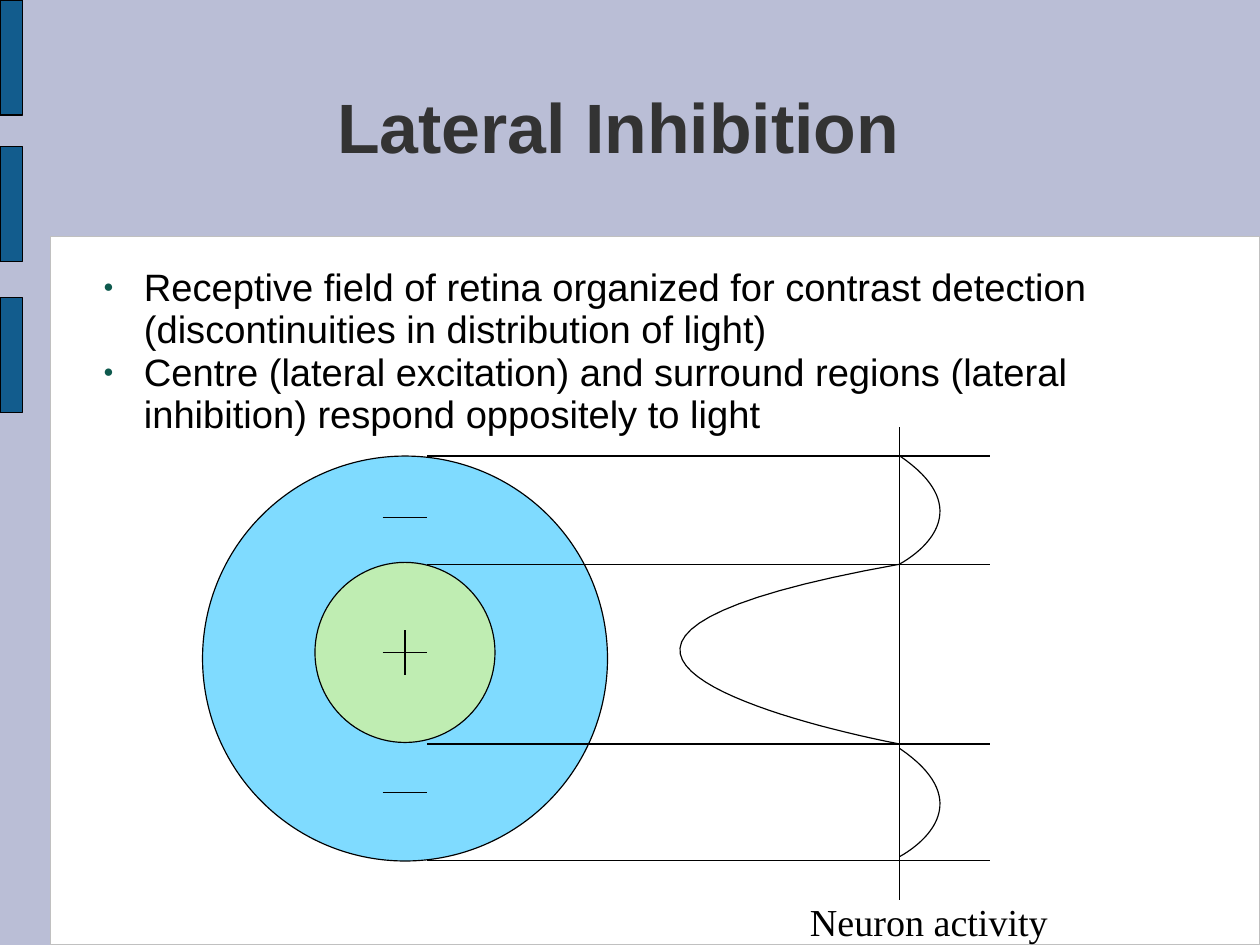
from lxml.etree import SubElement as Sub
from pptx import Presentation
from pptx.dml.color import RGBColor
from pptx.enum.shapes import MSO_CONNECTOR as Link, MSO_SHAPE as Kind
from pptx.enum.text import MSO_ANCHOR as Anchor, PP_ALIGN as Align
from pptx.oxml.ns import qn
from pptx.util import Pt

BLACK = RGBColor(0x00, 0x00, 0x00)
WHITE = RGBColor(0xFF, 0xFF, 0xFF)
LILAC = RGBColor(0xBA, 0xBE, 0xD6)
SILVER = RGBColor(0xC0, 0xC0, 0xC0)
NAVY = RGBColor(0x12, 0x5C, 0x8D)
GREY = RGBColor(0x33, 0x33, 0x33)
SKY = RGBColor(0x00, 0xB8, 0xFF)
YELLOW = RGBColor(0xFF, 0xFF, 0x66)
TEAL = RGBColor(0x0E, 0x59, 0x4D)


class Sketch:
    font = "Arial"
    width = 0.75

    def __init__(self, slide):
        self.slide = slide
        self.shapes = slide.shapes

    def stroke(self, item, color=BLACK):
        item.line.color.rgb = color
        item.line.width = Pt(self.width)

    def shape(self, kind, box, fill, line=BLACK, alpha=None):
        item = self.shapes.add_shape(kind, *map(Pt, box))
        item.shadow.inherit = False
        item.fill.solid()
        item.fill.fore_color.rgb = fill
        self.stroke(item, line)
        if alpha:
            tint = item.fill._xPr.find(".//" + qn("a:srgbClr"))
            Sub(tint, qn("a:alpha"), val=str(alpha * 1000))

    def line(self, *ends):
        item = self.shapes.add_connector(Link.STRAIGHT, *map(Pt, ends))
        self.stroke(item)
        Sub(item._element.spPr, qn("a:effectLst"))

    def curve(self, x, pull, top, mid, end, steps=40):
        dots = []
        for i in range(steps + 1):
            t = i / steps
            a, b = (1 - t) ** 3, 3 * t * (1 - t) ** 2
            c = 1 - a - b
            dots.append((Pt(x + b * (pull - x)), Pt(a * top + b * mid + c * end)))
        path = self.shapes.build_freeform(*dots[0])
        path.add_line_segments(dots[1:], close=False)
        item = path.convert_to_shape()
        item.shadow.inherit = False
        item.fill.background()
        self.stroke(item)

    def text(self, box, lines, size, color=BLACK, font=None, bold=False,
             align=Align.LEFT, anchor=Anchor.TOP, inset=1.4, space=0.93,
             bullet=False):
        frame = self.shapes.add_textbox(*map(Pt, box)).text_frame
        frame.word_wrap = True
        frame.vertical_anchor = anchor
        frame.margin_left = frame.margin_right = frame.margin_bottom = 0
        frame.margin_top = Pt(inset)
        frame.text = "\n".join(lines)
        for para in frame.paragraphs:
            para.alignment = align
            para.line_spacing = space
            for run in para.runs:
                run.font.name = font or self.font
                run.font.size = Pt(size)
                run.font.bold = bold
                run.font.color.rgb = color
            if bullet:
                self.bullet(para)

    def bullet(self, para):
        props = para._p.get_or_add_pPr()
        props.set("marL", str(Pt(34)))
        props.set("indent", str(Pt(-25.5)))
        Sub(Sub(props, qn("a:buClr")), qn("a:srgbClr"), val=str(TEAL))
        Sub(props, qn("a:buSzPct"), val="45000")
        Sub(props, qn("a:buFont"), typeface=self.font)
        Sub(props, qn("a:buChar"), char="●")


def main():
    deck = Presentation()
    deck.slide_width, deck.slide_height = Pt(793.7), Pt(595.3)
    slide = deck.slides.add_slide(deck.slide_layouts[6])
    slide.background.fill.solid()
    slide.background.fill.fore_color.rgb = LILAC
    art = Sketch(slide)

    art.shape(Kind.RECTANGLE, (32, 149.2, 761.7, 446.1), WHITE, SILVER)
    for top in (0, 92.2, 187.4):
        art.shape(Kind.RECTANGLE, (0, top, 14.2, 72.5), NAVY)

    art.text((56.7, 31, 666, 99.4), ["Lateral Inhibition"], 44, GREY,
             bold=True, align=Align.CENTER, anchor=Anchor.MIDDLE, inset=2.9)
    art.text((56.7, 167, 652.3, 375.1), [
        "Receptive field of retina organized for contrast detection "
        "(discontinuities in distribution of light)",
        "Centre (lateral excitation) and surround regions "
        "(lateral inhibition) respond oppositely to light",
    ], 24, bullet=True)

    art.shape(Kind.OVAL, (127.6, 287.3, 255.1, 255.1), SKY, alpha=50)
    art.shape(Kind.OVAL, (198.4, 354.3, 113.4, 113.4), YELLOW, alpha=50)

    left, right, axis = 269.3, 623.6, 566.9
    for y in (326, 411, 499):
        art.line(241, y, left, y)
    art.line(255.1, 396.9, 255.1, 425.2)
    for y in (287.3, 355.4, 468.7, 542.3):
        art.line(left, y, right, y)
    art.line(axis, 269.3, axis, 566.9)

    for top in (287.3, 471.6):
        art.curve(axis, right, top, top + 38.7, top + 67.9)
    art.curve(axis, 255.1, 355.4, 411, 468.7)

    art.text((510.2, 566.9, 155.9, 27.4), ["Neuron activity"], 24,
             font="Times New Roman", space=0.95)
    deck.save("out.pptx")


if __name__ == "__main__":
    main()
